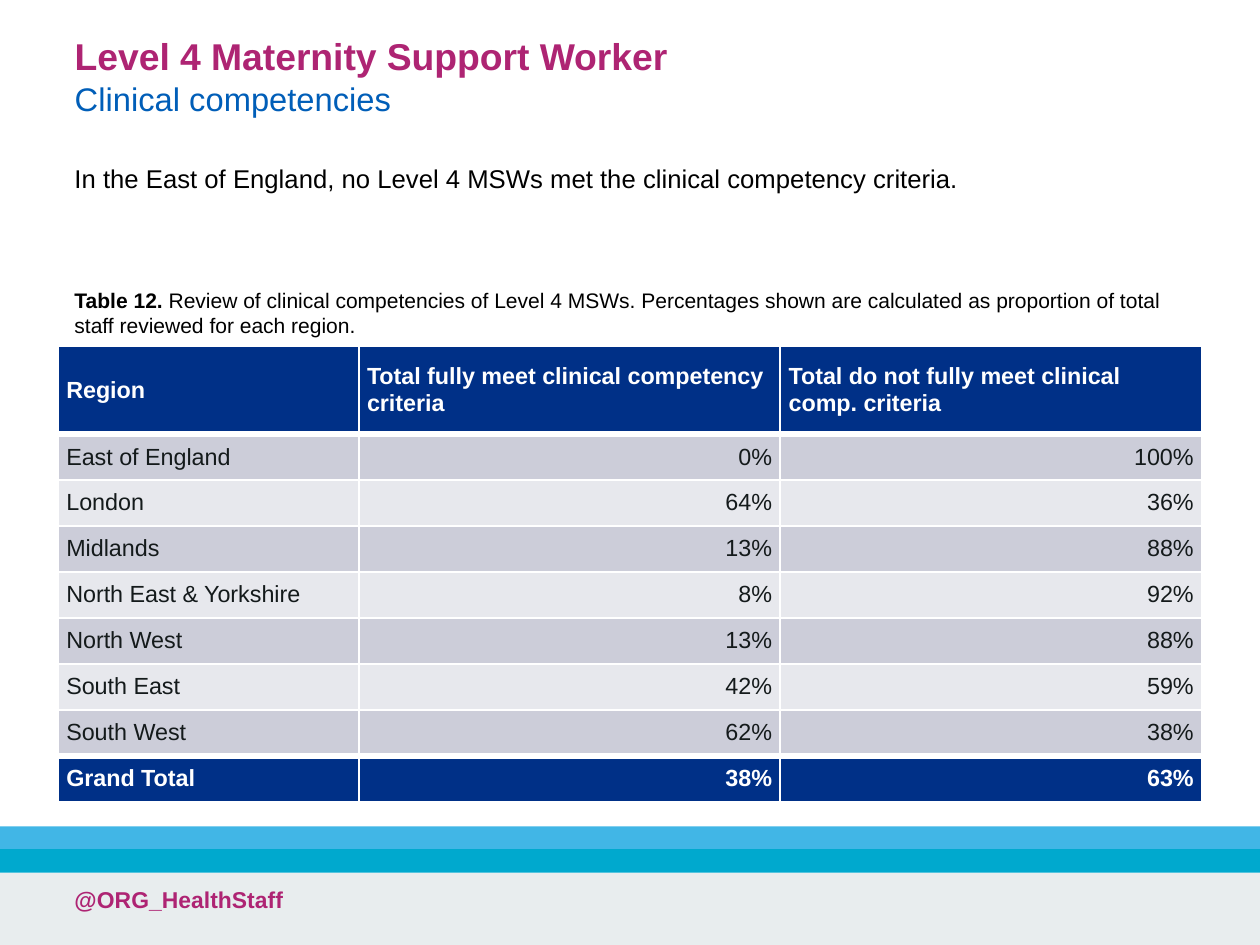
from dataclasses import dataclass

from lxml import etree
from pptx import Presentation
from pptx import util as u
from pptx.dml.color import RGBColor
from pptx.enum import shapes, text
from pptx.oxml import ns

GRID = u.Inches(0.1)
COLUMNS, ROWS = 75, 56.25
MARGIN, CONTENT_WIDTH = 3.45, 68.1
TABLE_COLUMNS = (17.9, 25.1, 25.1)
HEADER_HEIGHT, ROW_HEIGHT = 5.24, 2.74
FONT = "Arial"
NAVY, MAGENTA, BLUE, WHITE, BLACK = "003087", "AE2473", "005EB8", "FFFFFF", "000000"
STRIPES = ("CCCDD9", "E7E8ED")
CELL_INK = "141A1B"


@dataclass(frozen=True)
class Area:
    left: float
    top: float
    width: float
    height: float

    def emu(self) -> tuple[int, ...]:
        return tuple(round(n * GRID) for n in (self.left, self.top, self.width, self.height))


@dataclass(frozen=True)
class Band:
    area: Area
    color: str


@dataclass(frozen=True)
class Line:
    words: str
    size: float
    color: str
    bold: bool = False
    lead: str = ""


@dataclass(frozen=True)
class Block:
    area: Area
    lines: tuple[Line, ...]


BANDS = (
    Band(Area(0, 51.95, COLUMNS, ROWS - 51.95), "E8EDEE"),
    Band(Area(0, 49.2, COLUMNS, 1.4), "41B6E6"),
    Band(Area(0, 50.55, COLUMNS, 1.4), "00A9CE"),
)
TITLE = Block(Area(MARGIN, 1.5, CONTENT_WIDTH, 6.1), (
    Line("Level 4 Maternity Support Worker", 16, MAGENTA, True),
    Line("Clinical competencies", 14, BLUE),
))
BLOCKS = (
    Block(Area(MARGIN, 52.25, 43.8, 4), (Line("@ORG_HealthStaff", 9.8, MAGENTA, True),)),
    Block(Area(MARGIN, 9.2, CONTENT_WIDTH, 6.1), (
        Line("In the East of England, no Level 4 MSWs met the clinical competency criteria.", 11, BLACK),
    )),
    Block(Area(MARGIN, 16.6, CONTENT_WIDTH, 4), (
        Line("Review of clinical competencies of Level 4 MSWs. Percentages shown are calculated "
             "as proportion of total staff reviewed for each region.", 9, BLACK, lead="Table 12. "),
    )),
)
RECORDS = (
    ("Region", "Total fully meet clinical competency criteria",
     "Total do not fully meet clinical comp. criteria"),
    ("East of England", "0%", "100%"),
    ("London", "64%", "36%"),
    ("Midlands", "13%", "88%"),
    ("North East & Yorkshire", "8%", "92%"),
    ("North West", "13%", "88%"),
    ("South East", "42%", "59%"),
    ("South West", "62%", "38%"),
    ("Grand Total", "38%", "63%"),
)


def rgb(value: str) -> RGBColor:
    return RGBColor.from_string(value)


def style(para, size: float, color: str, bold: bool) -> None:
    para.font.name = FONT
    para.font.size = u.Pt(size)
    para.font.bold = bold
    para.font.color.rgb = rgb(color)


def draw_band(page, band: Band) -> None:
    box = page.shapes.add_shape(shapes.MSO_SHAPE.RECTANGLE, *band.area.emu())
    box.shadow.inherit = False
    box.fill.solid()
    box.fill.fore_color.rgb = rgb(band.color)
    box.line.fill.background()


def write_block(box, block: Block) -> None:
    box.left, box.top, box.width, box.height = block.area.emu()
    frame = box.text_frame
    frame.word_wrap = True
    frame.auto_size = text.MSO_AUTO_SIZE.NONE
    frame.vertical_anchor = text.MSO_ANCHOR.TOP
    for index, line in enumerate(block.lines):
        para = frame.add_paragraph() if index else frame.paragraphs[0]
        para.alignment = text.PP_ALIGN.LEFT
        para.space_before = u.Pt(0)
        style(para, line.size, line.color, line.bold)
        if line.lead:
            span = para.add_run()
            span.text = line.lead
            span.font.bold = True
        para.add_run().text = line.words


def set_borders(cell, top: float, bottom: float) -> None:
    properties = cell._tc.get_or_add_tcPr()
    sides = (("a:lnL", 1), ("a:lnR", 1), ("a:lnT", top), ("a:lnB", bottom))
    for index, (tag, width) in enumerate(sides):
        border = etree.Element(ns.qn(tag), w=str(u.Pt(width)))
        fill = etree.SubElement(border, ns.qn("a:solidFill"))
        etree.SubElement(fill, ns.qn("a:srgbClr"), val=WHITE)
        properties.insert(index, border)


def draw_table(page) -> None:
    last = len(RECORDS) - 1
    area = Area(MARGIN, 20.6, CONTENT_WIDTH, HEADER_HEIGHT + last * ROW_HEIGHT)
    table = page.shapes.add_table(len(RECORDS), len(TABLE_COLUMNS), *area.emu()).table
    for column, width in zip(table.columns, TABLE_COLUMNS):
        column.width = round(width * GRID)
    for row, record in enumerate(RECORDS):
        strong = row in (0, last)
        table.rows[row].height = round((ROW_HEIGHT if row else HEADER_HEIGHT) * GRID)
        for column, words in enumerate(record):
            cell = table.cell(row, column)
            cell.text = words
            cell.vertical_anchor = text.MSO_ANCHOR.MIDDLE
            cell.margin_left = cell.margin_right = u.Inches(0.05)
            cell.margin_top = cell.margin_bottom = u.Inches(0.05)
            cell.fill.solid()
            cell.fill.fore_color.rgb = rgb(NAVY if strong else STRIPES[(row - 1) % 2])
            para = cell.text_frame.paragraphs[0]
            para.alignment = text.PP_ALIGN.RIGHT if row and column else text.PP_ALIGN.LEFT
            style(para, 10, WHITE if strong else CELL_INK, strong)
            set_borders(cell, 3 if row in (1, last) else 1, 3 if row in (0, last - 1) else 1)


def main() -> None:
    deck = Presentation()
    deck.slide_width, deck.slide_height = round(COLUMNS * GRID), round(ROWS * GRID)
    page = deck.slides.add_slide(deck.slide_layouts[5])
    for band in BANDS:
        draw_band(page, band)
    write_block(page.shapes.title, TITLE)
    for block in BLOCKS:
        write_block(page.shapes.add_textbox(*block.area.emu()), block)
    draw_table(page)
    deck.save("out.pptx")


if __name__ == "__main__":
    main()
